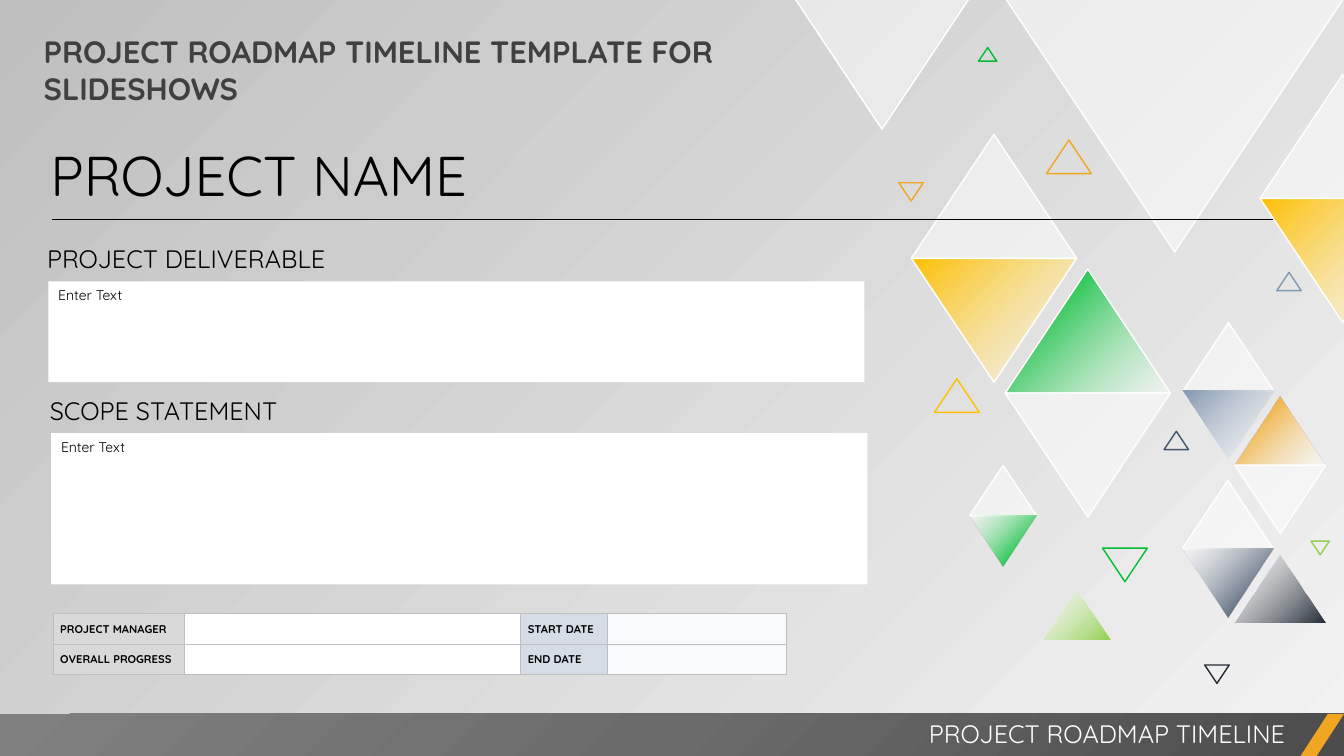
from lxml import etree
from pptx import Presentation
from pptx.dml.color import RGBColor
from pptx.enum.shapes import MSO_CONNECTOR, MSO_SHAPE
from pptx.enum.text import MSO_ANCHOR, MSO_AUTO_SIZE, PP_ALIGN
from pptx.oxml.ns import qn
from pptx.util import Pt

RECT = MSO_SHAPE.RECTANGLE
TRIANGLE = MSO_SHAPE.ISOSCELES_TRIANGLE
SLANT = MSO_SHAPE.PARALLELOGRAM
STRAIGHT = MSO_CONNECTOR.STRAIGHT
TOP, MIDDLE = MSO_ANCHOR.TOP, MSO_ANCHOR.MIDDLE
LEFT, RIGHT = PP_ALIGN.LEFT, PP_ALIGN.RIGHT
FIXED = MSO_AUTO_SIZE.NONE

FONT = "Quicksand"
BLACK = RGBColor(0, 0, 0)
WHITE = RGBColor(255, 255, 255)
GOLD = RGBColor(0xFF, 0xC0, 0x00)
AMBER = RGBColor(0xF0, 0xA6, 0x22)
GREEN = RGBColor(0x00, 0xBD, 0x32)
LIME = RGBColor(0x92, 0xD0, 0x50)
STEEL = RGBColor(0x84, 0x97, 0xB0)
SLATE = RGBColor(0x44, 0x54, 0x6A)
INK = RGBColor(0x22, 0x2A, 0x35)
PALE = RGBColor(0xF2, 0xF2, 0xF2)
SILVER = RGBColor(0xBF, 0xBF, 0xBF)
LIGHT = RGBColor(0xD9, 0xD9, 0xD9)
MIST = RGBColor(0xD6, 0xDC, 0xE5)
FROST = RGBColor(0xF7, 0xF9, 0xFB)
CHAR = RGBColor(0x40, 0x40, 0x40)
DARK = RGBColor(0x4C, 0x4C, 0x4C)
MID = RGBColor(0x6B, 0x6B, 0x6B)
GRAY = RGBColor(0x80, 0x80, 0x80)

BIG, SMALL, TINY = 118, 65, 48
LATE = (GREEN, SLATE, AMBER)
DIAMONDS = [
    (91, 96, BIG, WHITE, GOLD),
    (158, 192.25, BIG, GREEN, WHITE),
    (158, -183, 242, None, WHITE),
    (321.5, 396, SMALL, INK, None),
    (284.5, 343.25, SMALL, WHITE, SLATE),
    (285, 230.5, SMALL, WHITE, STEEL),
    (322, 283.5, SMALL, AMBER, WHITE),
    (185, 421, TINY, LIME, None),
    (132.5, 332.5, TINY, WHITE, GREEN),
    (340, 53.25, BIG, WHITE, GOLD),
    (7.5, -95.25, 125, None, WHITE),
]
OUTLINES = [
    (227.5, 391.5, 32, True, GREEN),
    (107.5, 270.5, 32, False, GOLD),
    (271.5, 308, 17.5, False, SLATE),
    (300.5, 475, 17.5, True, INK),
    (82, 130.5, 17.5, True, AMBER),
    (352, 194.5, 17.5, False, STEEL),
    (139, 34, 13, False, GREEN),
    (376.5, 386.5, 13, True, LIME),
    (187.5, 100, 32, False, AMBER),
]
ROWS = [("PROJECT MANAGER", "", "START DATE", ""),
        ("OVERALL PROGRESS", "", "END DATE", "")]
COLS = [(93.5, LIGHT), (240.5, WHITE), (62, MIST), (128, FROST)]


def tint(node, color, alpha=100):
    """Add a colour with an opacity in percent to an XML node."""
    tone = etree.SubElement(node, qn("a:srgbClr"), val=str(color))
    if alpha < 100:
        etree.SubElement(tone, qn("a:alpha"), val=str(alpha * 1000))


def blend(fill, root, stops, corner=False):
    """Give a fill a diagonal gradient, or one spreading from a corner."""
    fill.gradient()
    grad = next(root.iter(qn("a:gradFill")))
    for child in list(grad):
        grad.remove(child)
    group = etree.SubElement(grad, qn("a:gsLst"))
    for place, color, alpha in stops:
        stop = etree.SubElement(group, qn("a:gs"), pos=str(place * 1000))
        tint(stop, color, alpha)
    if corner:
        way = etree.SubElement(grad, qn("a:path"), path="circle")
        etree.SubElement(way, qn("a:fillToRect"), l="100000", t="100000")
    else:
        etree.SubElement(grad, qn("a:lin"), ang=str(225 * 60000), scaled="0")


def block(slide, kind, box, color=None):
    """Add a preset shape without shadow or line."""
    shape = slide.shapes.add_shape(kind, *map(Pt, box))
    shape.shadow.inherit = False
    shape.line.fill.background()
    if color is None:
        shape.fill.background()
    else:
        shape.fill.solid()
        shape.fill.fore_color.rgb = color
    return shape


def write(frame, text, size, color=BLACK, bold=False, align=LEFT):
    """Put one formatted run in a text frame."""
    frame.word_wrap = True
    frame.auto_size = FIXED
    frame.vertical_anchor = TOP
    para = frame.paragraphs[0]
    para.alignment = align
    run = para.add_run()
    run.text = text
    run.font.name = FONT
    run.font.size = Pt(size)
    run.font.bold = bold
    run.font.color.rgb = color
    return para


def label(slide, box, text, size, color=BLACK, align=LEFT):
    """Add a text box with one line of text."""
    area = slide.shapes.add_textbox(*map(Pt, box))
    write(area.text_frame, text, size, color, align=align)


def wedge(slide, x, y, width, down, color=None, edge=None):
    """Add a triangle that is clear, see-through white or fading."""
    shape = block(slide, TRIANGLE, (x, y, width, width * 0.75), color)
    shape.rotation = 180 if down else 0
    if color == WHITE:
        tone = next(shape.fill._xPr.iter(qn("a:srgbClr")))
        etree.SubElement(tone, qn("a:alpha"), val="50000")
    elif color in LATE:
        blend(shape.fill, shape._element, [(0, WHITE, 50), (82, color, 100)])
    elif color is not None:
        blend(shape.fill, shape._element, [(0, color, 100), (100, WHITE, 50)])
    if edge is not None:
        shape.line.color.rgb = edge
        shape.line.width = Pt(1)


def art(slide, box):
    """Draw the triangles on the right side."""
    left, top = box[:2]
    for x, y, width, upper, lower in DIAMONDS:
        for down, color in enumerate((upper, lower)):
            if color is not None:
                edge = WHITE if color == WHITE or width == BIG else None
                wedge(slide, left + x, top + y + down * width * 0.75,
                      width, down, color, edge)
    for x, y, width, down, color in OUTLINES:
        wedge(slide, left + x, top + y, width, down, edge=color)


def head(slide, box):
    """Place the slide title, the project name and the rule below."""
    x, y, width, _ = box
    title = slide.shapes.title
    title.left, title.top = Pt(x), Pt(y)
    title.width, title.height = Pt(600), Pt(60)
    para = write(title.text_frame,
                 "PROJECT ROADMAP TIMELINE TEMPLATE FOR SLIDESHOWS",
                 22, CHAR, True)
    para.line_spacing = 1.0
    label(slide, (x + 5, y + 77, width, 55.5), "PROJECT NAME", 40)
    rule = slide.shapes.add_connector(
        STRAIGHT, Pt(x + 13.5), Pt(y + 137), Pt(x + 885.5), Pt(y + 137))
    rule.line.color.rgb = BLACK
    rule.line.width = Pt(0.5)
    etree.SubElement(rule._element.spPr, qn("a:effectLst"))


def field(slide, box, name):
    """Place a heading with a white entry box under it."""
    x, y, width, height = box
    label(slide, (x, y, 220, 29), name, 18)
    area = block(slide, RECT, (x + 8, y + 31, width - 8, height - 31), WHITE)
    write(area.text_frame, "Enter Text", 10)


def grid(slide, box):
    """Place the table of people and dates."""
    table = slide.shapes.add_table(len(ROWS), len(COLS), *map(Pt, box)).table
    for col, (width, _) in zip(table.columns, COLS):
        col.width = Pt(width)
    for i, texts in enumerate(ROWS):
        table.rows[i].height = Pt(box[3] / len(ROWS))
        for j, text in enumerate(texts):
            cell = table.cell(i, j)
            cell.margin_left = cell.margin_right = Pt(5)
            cell.margin_top = cell.margin_bottom = 0
            para = cell.text_frame.paragraphs[0]
            if text:
                para = write(cell.text_frame, text, 8, bold=True)
                para.line_spacing = 1.07
            else:
                etree.SubElement(para._p, qn("a:endParaRPr"), sz="800")
            cell.vertical_anchor = MIDDLE
            props = cell._tc.get_or_add_tcPr()
            for side in ("lnL", "lnR", "lnT", "lnB"):
                line = etree.SubElement(props, qn("a:" + side), w=str(Pt(1)))
                tint(etree.SubElement(line, qn("a:solidFill")), SILVER)
            cell.fill.solid()
            cell.fill.fore_color.rgb = COLS[j][1]


def foot(slide, box):
    """Place the dark band with its caption and slanted mark."""
    x, y, width, height = box
    band = block(slide, RECT, box)
    blend(band.fill, band._element,
          [(0, DARK, 100), (50, MID, 100), (100, GRAY, 100)], True)
    mark = block(slide, SLANT, (x + width - 31, y, 31, height), AMBER)
    mark.adjustments[0] = 0.65
    label(slide, (x + 378, y - 0.5, 547, 29), "PROJECT ROADMAP TIMELINE",
          18, WHITE, RIGHT)


def main():
    """Build the slide and save it."""
    deck = Presentation()
    deck.slide_width, deck.slide_height = Pt(960), Pt(540)
    slide = deck.slides.add_slide(deck.slide_layouts[5])
    blend(slide.background.fill, slide._element,
          [(0, PALE, 40), (100, SILVER, 100)])
    art(slide, (560, 0, 400, 510))
    head(slide, (24, 20, 883, 137))
    foot(slide, (0, 510, 960, 30))
    grid(slide, (38, 438.5, 524, 43.2))
    field(slide, (26.5, 170, 591, 103), "PROJECT DELIVERABLE")
    field(slide, (28.5, 278.5, 591, 139), "SCOPE STATEMENT")
    deck.save("out.pptx")


if __name__ == "__main__":
    main()
